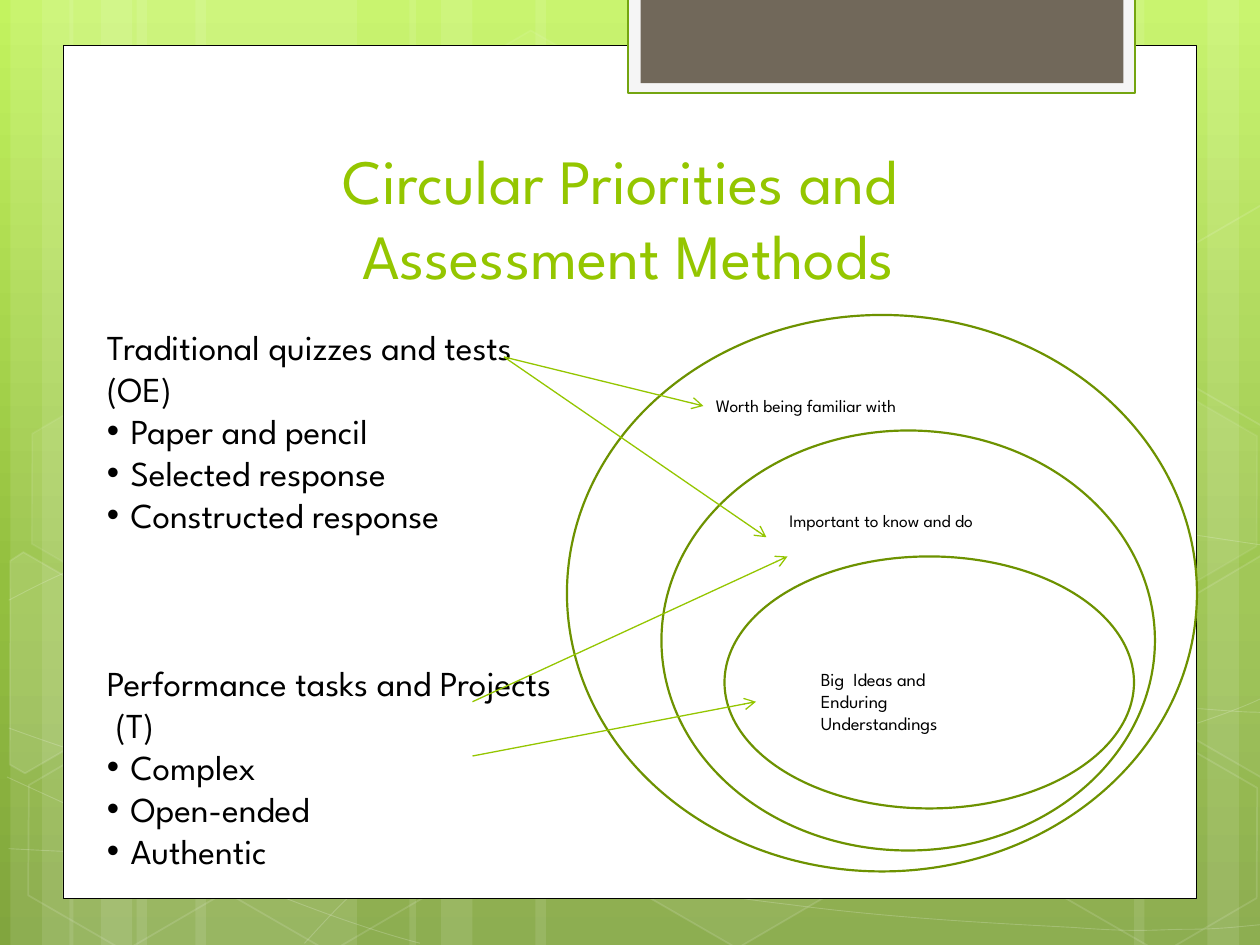
from copy import deepcopy
from math import cos, radians, sin

from lxml import etree
from pptx import Presentation
from pptx import util as u
from pptx.dml.color import RGBColor
from pptx.enum import shapes, text
from pptx.oxml.ns import qn

FONT = "League Spartan"
LIME, OLIVE, WHITE, BLACK = "94C600", "6D9200", "FFFFFF", "000000"

# Content: wording (all lengths in points)
TITLE = "Circular Priorities and \vAssessment Methods"
METHODS = [
    ("Traditional quizzes and tests (OE)",
     ["Paper and pencil", "Selected response", "Constructed response"]),
    ("Performance tasks and Projects  (T)",
     ["Complex", "Open-ended", "Authentic"]),
]
METHOD_GAP = 72
PRIORITIES = [  # ellipse box, label box, label size, label lines
    ((324, 180, 360, 318), (402, 222, 192, 19.5), 10, ["Worth being familiar with"]),
    ((378, 246, 282, 240), (444, 288, 162, 19.5), 10, ["Important to know and do"]),
    ((414, 318, 234, 144), (462, 378, 144, 45), 10.5,
     ["Big  Ideas and", "Enduring", "Understandings"]),
]
ARROWS = [
    ((288, 204), (402, 232)),
    ((288, 204), (438, 307)),
    ((270, 432), (432, 401)),
    ((270, 401), (450, 318)),
]

# Content: backdrop
SKY = [(0, "C3F35F"), (0.62, "93BF3F"), (1, "81A53E")]
STRIPS = [(78, 126), (6, 36), (24, 60), (111.6, 126), (39.6, 36), (57.6, 60),
          (528, 126), (690, 36), (648, 60), (306, 222), (234, 36), (252, 60)]
CURVES = [  # start point, then three points for each Bezier segment
    [(5, 485), (44, 487), (83, 489), (137, 488), (191, 487), (258, 486), (330, 479),
     (402, 472), (504, 458), (570, 444), (636, 430), (703, 409), (725, 397)],
    [(5, 343), (26, 332), (47, 321), (87, 310), (128, 300), (186, 284), (250, 279),
     (314, 274), (392, 273), (471, 279), (550, 284), (682, 306), (725, 312)],
    [(4, 444), (91, 484), (178, 523), (240, 539)],
    [(5, 416), (27, 424), (50, 432), (92, 444), (134, 454), (197, 472), (257, 485),
     (317, 497), (392, 510), (452, 517), (512, 525), (576, 528), (614, 530),
     (652, 533), (662, 531), (680, 531), (699, 531), (712, 529), (725, 528)],
    [(174, 539), (187, 525), (200, 510), (217, 498), (235, 485), (259, 470), (279, 460),
     (300, 450), (312, 446), (338, 438), (364, 431), (413, 421), (438, 416),
     (464, 411), (467, 411), (490, 410), (512, 408), (547, 405), (572, 405),
     (597, 404), (638, 405), (638, 405), (654, 405), (670, 405), (686, 405),
     (699, 406), (711, 407), (718, 407), (720, 407), (722, 407), (724, 408)],
]
TILT = 30
HEXAGONS = [  # left, top, fill opacity, line opacity (percent)
    (240.5, 26, 4, 8), (358, 424, 6, 12), (8, 425.5, None, 12), (10, 224.6, 7, 8),
    (125.3, 426.2, None, 12), (542, 326, 10, 12), (600.5, 427, None, 12),
    (600.5, 226, 7, 8),
]
LEFT_CUT = [(5.8, 320.4), (13.7, 315.4), (69, 347), (68.4, 410.4), (14.4, 442), (5.8, 437)]
RIGHT_CUT = [(666.7, 349.2), (720.7, 317.5), (726.5, 321), (726.5, 441.4),
             (721.4, 444.2), (666.7, 412.6)]
CUT_HEXAGONS = [  # corners, centre, fill opacity
    (LEFT_CUT, (25.9, 385.2), 10),
    (RIGHT_CUT, (709.2, 374.4), 4),
    ([(x, y - 200.5) for x, y in RIGHT_CUT], (709.2, 173.9), None),
]
PANELS = [  # box, fill, line colour, line width
    ((36, 26, 648, 487.2), WHITE, BLACK, 0.5),
    ((359, -1.5, 289.8, 54.7), "F5F5F5", "74A510", 1.25),
    ((366, -1.5, 276, 49), "71685A", None, 0),
]

prs = Presentation()
prs.slide_width, prs.slide_height = u.Pt(720), u.Pt(540)
slide = prs.slides.add_slide(prs.slide_layouts[6])


def pts(values):
    return [u.Pt(v) for v in values]


def paint(color_format, color):
    color_format.rgb = RGBColor.from_string(color)


def fade(part, xpath, percent):
    for color in part.element.spPr.xpath(xpath):
        etree.SubElement(color, qn("a:alpha"), val=str(percent * 1000))


def style(part, fill=None, line=None, width=1, fill_alpha=100, line_alpha=100):
    part.shadow.inherit = False
    if fill:
        part.fill.solid()
        paint(part.fill.fore_color, fill)
    else:
        part.fill.background()
    if line:
        paint(part.line.color, line)
        part.line.width = u.Pt(width)
    else:
        part.line.fill.background()
    if fill_alpha < 100:
        fade(part, "a:solidFill/a:srgbClr", fill_alpha)
    if line_alpha < 100:
        fade(part, "a:ln/a:solidFill/a:srgbClr", line_alpha)


def preset(kind, box, **look):
    part = slide.shapes.add_shape(kind, *pts(box))
    style(part, **look)
    return part


def outline(points, closed, **look):
    builder = slide.shapes.build_freeform(*points[0], scale=u.Pt(1))
    builder.add_line_segments(points[1:], close=closed)
    part = builder.convert_to_shape()
    style(part, **look)
    return part


def bend(part):
    """Turn every three straight segments into one Bezier segment."""
    lines = part.element.spPr.xpath(".//a:path/a:lnTo")
    for i in range(0, len(lines), 3):
        segment = etree.Element(qn("a:cubicBezTo"))
        lines[i].addprevious(segment)
        for line in lines[i:i + 3]:
            segment.append(line[0])
            line.getparent().remove(line)


def turn(point, centre, degrees):
    c, s = cos(radians(degrees)), sin(radians(degrees))
    dx, dy = point[0] - centre[0], point[1] - centre[1]
    return centre[0] + dx * c - dy * s, centre[1] + dx * s + dy * c


def text_box(box, lines, size, color=BLACK):
    frame = slide.shapes.add_textbox(*pts(box)).text_frame
    frame.word_wrap = True
    for i, line in enumerate(lines):
        paragraph = frame.add_paragraph() if i else frame.paragraphs[0]
        paragraph.text = line
        paragraph.font.size, paragraph.font.name = u.Pt(size), FONT
        paint(paragraph.font.color, color)
    return frame


def add_bullet(paragraph, indent=13.5):
    props = paragraph._p.get_or_add_pPr()
    props.set("marL", str(u.Pt(indent)))
    props.set("indent", str(-u.Pt(indent)))
    for tag, value in (("a:buFont", {"typeface": "Arial"}), ("a:buChar", {"char": "•"})):
        props.insert_element_before(etree.Element(qn(tag), value),
                                    "a:tabLst", "a:defRPr", "a:extLst")


# Background gradient, top to bottom
sky = slide.background.fill
sky.gradient()
sky.gradient_angle = 270
first_stop = slide.element.xpath(".//p:bgPr/a:gradFill/a:gsLst/a:gs")[0]
first_stop.addnext(deepcopy(first_stop))
for stop, (position, color) in zip(sky.gradient_stops, SKY):
    stop.position = position
    paint(stop.color, color)

# Pale strips, curves and hexagons
for left, width in STRIPS:
    preset(shapes.MSO_SHAPE.RECTANGLE, (left, 0, width, 540), fill=WHITE, fill_alpha=10)
for curve in CURVES:
    bend(outline(curve, False, line=WHITE, width=0.5, line_alpha=20))
for left, top, opacity, line_opacity in HEXAGONS:
    hexagon = preset(shapes.MSO_SHAPE.HEXAGON, (left, top, 126, 109.4),
                     fill=opacity and WHITE, fill_alpha=opacity or 100,
                     line=WHITE, line_alpha=line_opacity)
    hexagon.adjustments[0] = 0.285
    hexagon.rotation = TILT
for corners, centre, opacity in CUT_HEXAGONS:
    upright = [turn(corner, centre, -TILT) for corner in corners]
    cut = outline(upright, True, fill=opacity and WHITE, fill_alpha=opacity or 100,
                  line=WHITE, line_alpha=12)
    cut.rotation = TILT

# White page and tab at the top
for box, fill, line, width in PANELS:
    preset(shapes.MSO_SHAPE.RECTANGLE, box, fill=fill, line=line, width=width)

# Title
title = text_box((82.3, 80.6, 553, 90), [TITLE], 36, LIME)
title.vertical_anchor = text.MSO_ANCHOR.BOTTOM
title.paragraphs[0].alignment = text.PP_ALIGN.CENTER

# Nested priorities
for ring, label_box, size, label in PRIORITIES:
    preset(shapes.MSO_SHAPE.OVAL, ring, line=OLIVE, width=1.25)
    text_box(label_box, label, size)

# Assessment methods
headings = [heading for heading, _ in METHODS]
method_lines = [line for heading, items in METHODS for line in (heading, *items)]
methods = text_box((54, 182.5, 270, 395), method_lines, 20)
for i, (line, paragraph) in enumerate(zip(method_lines, methods.paragraphs)):
    if line not in headings:
        add_bullet(paragraph)
    elif i:
        paragraph.space_before = u.Pt(METHOD_GAP)

# Arrows from methods to priorities
for start, end in ARROWS:
    arrow = slide.shapes.add_connector(shapes.MSO_CONNECTOR.STRAIGHT, *pts(start + end))
    paint(arrow.line.color, LIME)
    arrow.line.width = u.Pt(0.75)
    etree.SubElement(arrow.line._get_or_add_ln(), qn("a:tailEnd"), type="arrow")
    etree.SubElement(arrow.element.spPr, qn("a:effectLst"))

prs.save("out.pptx")
